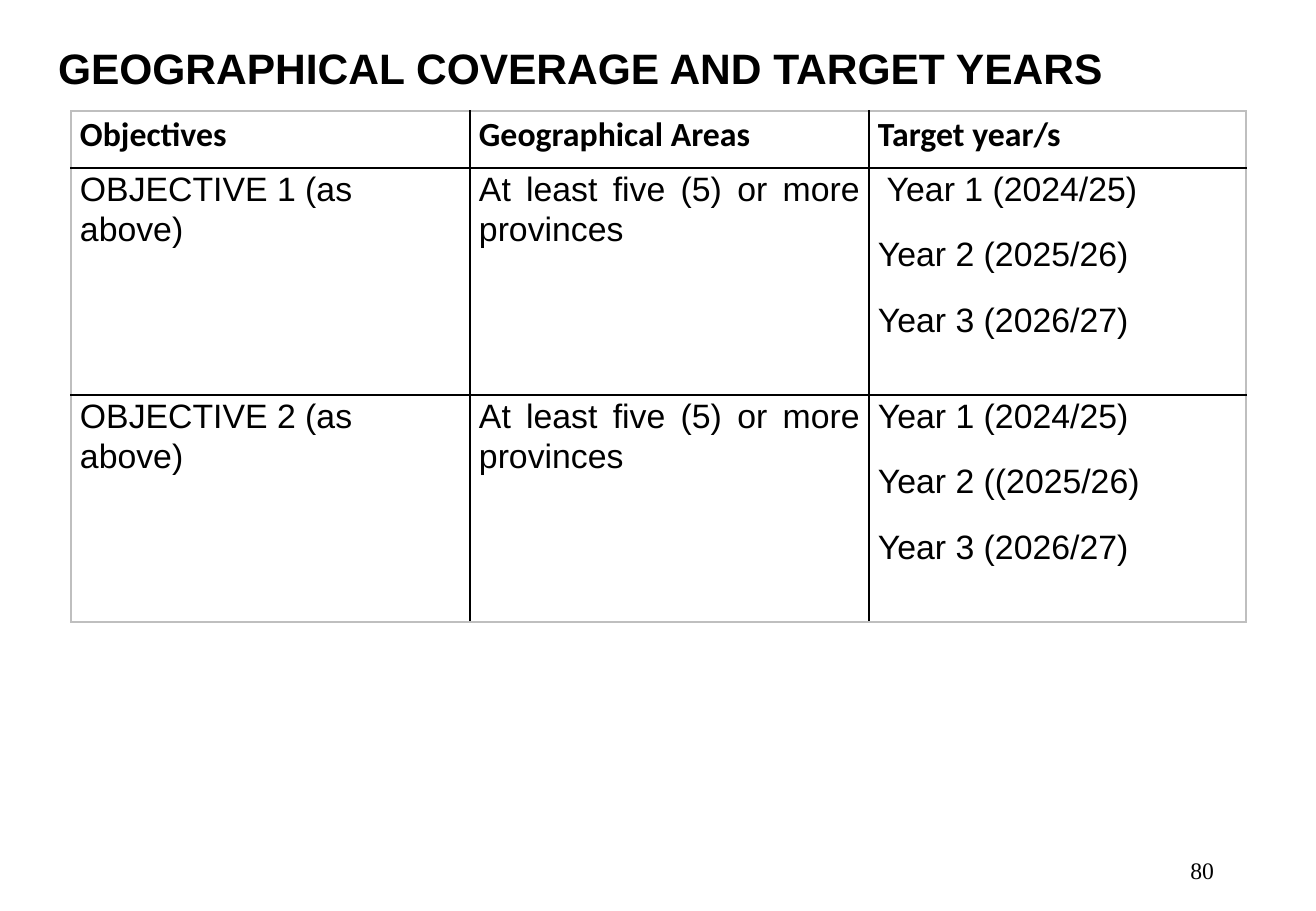
from lxml import etree
from pptx import Presentation, util as u
from pptx.dml.color import RGBColor
from pptx.enum import text as t
from pptx.oxml.ns import qn

PX = 914400 / 121.5
BLACK = RGBColor(0, 0, 0)
WHITE = RGBColor(255, 255, 255)
GRAY = RGBColor(0xBF, 0xBF, 0xBF)


def px(n):
    return u.Emu(round(n * PX))


def style(para, name, size, bold=False):
    font = para.runs[0].font
    font.name = name
    font.size = u.Pt(size)
    font.bold = bold
    font.color.rgb = BLACK


deck = Presentation()
deck.slide_width = px(1316)
deck.slide_height = px(911)
slide = deck.slides.add_slide(deck.slide_layouts[6])

labels = [
    ("GEOGRAPHICAL COVERAGE AND TARGET YEARS", (58, 38, 1190, 60),
     t.PP_ALIGN.LEFT, "Arial", 25.2, True),
    ("80", (930, 846, 284, 48),
     t.PP_ALIGN.RIGHT, "Times New Roman", 14, False),
]
for words, area, align, name, size, bold in labels:
    frame = slide.shapes.add_textbox(*map(px, area)).text_frame
    frame.word_wrap = True
    frame.margin_left = frame.margin_right = 0
    frame.vertical_anchor = t.MSO_ANCHOR.MIDDLE
    frame.text = words
    para = frame.paragraphs[0]
    para.alignment = align
    style(para, name, size, bold)

area = "At least five (5) or more provinces"
rows = [
    ("Objectives", "Geographical Areas", "Target year/s"),
    ("OBJECTIVE 1 (as above)", area,
     " Year 1 (2024/25)\nYear 2 (2025/26)\nYear 3 (2026/27)"),
    ("OBJECTIVE 2 (as above)", area,
     "Year 1 (2024/25)\nYear 2 ((2025/26)\nYear 3 (2026/27)"),
]
widths = [399, 399, 377]
heights = [57, 227, 227]
box = map(px, (71, 111, sum(widths), sum(heights)))
table = slide.shapes.add_table(len(rows), len(widths), *box).table
for col, width in zip(table.columns, widths):
    col.width = px(width)
for row, height in zip(table.rows, heights):
    row.height = px(height)

for r, row in enumerate(rows):
    for c, words in enumerate(row):
        cell = table.cell(r, c)
        cell.margin_left = cell.margin_right = px(9)
        cell.margin_top = cell.margin_bottom = 0
        cell.text = words
        for n, para in enumerate(cell.text_frame.paragraphs):
            para.line_spacing = 1.07
            para.space_before = u.Pt(6 if n else 0)
            para.space_after = u.Pt(9)
            if r and c == 1:
                para.alignment = t.PP_ALIGN.JUSTIFY
            style(para, "Arial" if r else "Calibri", 20, r == 0)
        props = cell._tc.get_or_add_tcPr()
        edges = {"lnL": c == 0, "lnR": c == len(widths) - 1,
                 "lnT": r == 0, "lnB": r == len(rows) - 1}
        for tag, outer in edges.items():
            line = etree.SubElement(props, qn("a:" + tag), w="12700")
            fill = etree.SubElement(line, qn("a:solidFill"))
            etree.SubElement(fill, qn("a:srgbClr"),
                             val=str(GRAY if outer else BLACK))
        cell.fill.solid()
        cell.fill.fore_color.rgb = WHITE

deck.save("out.pptx")
